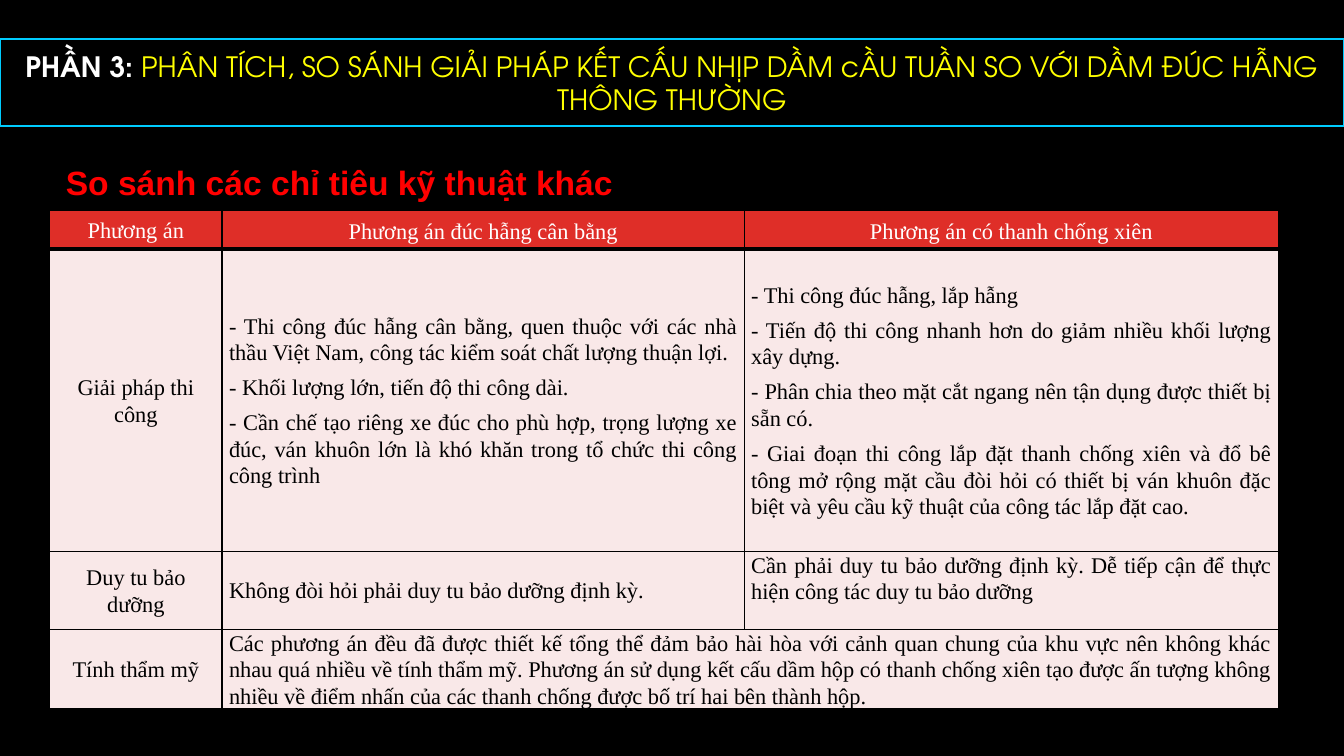
from dataclasses import dataclass

from lxml import etree
from pptx import Presentation
from pptx.dml.color import RGBColor
from pptx.enum.shapes import MSO_SHAPE
from pptx.enum.text import MSO_ANCHOR, PP_ALIGN
from pptx.oxml.ns import qn
from pptx.util import Pt

RECTANGLE = MSO_SHAPE.RECTANGLE
TOP, MIDDLE = MSO_ANCHOR.TOP, MSO_ANCHOR.MIDDLE
CENTER, JUSTIFY, LEFT = PP_ALIGN.CENTER, PP_ALIGN.JUSTIFY, PP_ALIGN.LEFT

BLACK = RGBColor(0x00, 0x00, 0x00)
WHITE = RGBColor(0xFF, 0xFF, 0xFF)
YELLOW = RGBColor(0xFF, 0xFF, 0x00)
RED = RGBColor(0xFF, 0x00, 0x00)
CYAN = RGBColor(0x00, 0xCC, 0xFF)
HEADER_RED = RGBColor(0xDF, 0x2E, 0x28)
BODY_PINK = RGBColor(0xF9, 0xE8, 0xE8)

TITLE_FONT, HEADING_FONT, TABLE_FONT = "TeX Gyre Adventor", "Arial", "Times New Roman"
COLUMN_WIDTHS = (123.12, 372.96, 381.6)
ROW_HEIGHTS = (28.08, 216, 55.44, 55.44)


@dataclass(frozen=True)
class RunStyle:
    font: str
    size: float
    color: RGBColor
    bold: bool = False


@dataclass(frozen=True)
class CellText:
    paragraphs: tuple[str, ...]
    anchor: MSO_ANCHOR = MIDDLE


HEADER_STYLE = RunStyle(TABLE_FONT, 16, WHITE)
BODY_STYLE = RunStyle(TABLE_FONT, 16, BLACK)

TABLE_ROWS = (
    (
        CellText(("Phương án",)),
        CellText(("Phương án đúc hẫng cân bằng",)),
        CellText(("Phương án có thanh chống xiên",)),
    ),
    (
        CellText(("Giải pháp thi công",)),
        CellText((
            "- Thi công đúc hẫng cân bằng, quen thuộc với các nhà thầu Việt Nam, "
            "công tác kiểm soát chất lượng thuận lợi.",
            "- Khối lượng lớn, tiến độ thi công dài.",
            "- Cần chế tạo riêng xe đúc cho phù hợp, trọng lượng xe đúc, ván khuôn lớn "
            "là khó khăn trong tổ chức thi công công trình",
        )),
        CellText((
            "- Thi công đúc hẫng, lắp hẫng",
            "- Tiến độ thi công nhanh hơn do giảm nhiều khối lượng xây dựng.",
            "- Phân chia theo mặt cắt ngang nên tận dụng được thiết bị sẵn có.",
            "- Giai đoạn thi công lắp đặt thanh chống xiên và đổ bê tông mở rộng mặt cầu "
            "đòi hỏi có thiết bị ván khuôn đặc biệt và yêu cầu kỹ thuật của công tác "
            "lắp đặt cao.",
        )),
    ),
    (
        CellText(("Duy tu bảo dưỡng",)),
        CellText(("Không đòi hỏi phải duy tu bảo dưỡng định kỳ.",)),
        CellText((
            "Cần phải duy tu bảo dưỡng định kỳ. Dễ tiếp cận để thực hiện công tác "
            "duy tu bảo dưỡng",
        ), TOP),
    ),
    (
        CellText(("Tính thẩm mỹ",)),
        CellText((
            "Các phương án đều đã được thiết kế tổng thể đảm bảo hài hòa với cảnh quan "
            "chung của khu vực nên không khác nhau quá nhiều về tính thẩm mỹ. Phương án "
            "sử dụng kết cấu dầm hộp có thanh chống xiên tạo được ấn tượng không nhiều "
            "về điểm nhấn của các thanh chống được bố trí hai bên thành hộp.",
        )),
    ),
)


def add_run(paragraph, text: str, style: RunStyle) -> None:
    run = paragraph.add_run()
    run.text = text
    run.font.name = style.font
    run.font.size = Pt(style.size)
    run.font.bold = style.bold
    run.font.color.rgb = style.color


def set_borders(cell, top: float, bottom: float) -> None:
    properties = cell._tc.get_or_add_tcPr()
    widths = {"a:lnL": 1, "a:lnR": 1, "a:lnT": top, "a:lnB": bottom}
    for position, (tag, width) in enumerate(widths.items()):
        line = etree.Element(qn(tag), w=str(int(Pt(width))))
        fill = etree.SubElement(line, qn("a:solidFill"))
        etree.SubElement(fill, qn("a:srgbClr"), val=str(BLACK))
        properties.insert(position, line)


def fill_cell(cell, content: CellText, is_header: bool, is_label: bool) -> None:
    cell.vertical_anchor = content.anchor
    cell.margin_left = cell.margin_right = Pt(5)
    cell.margin_top = cell.margin_bottom = Pt(0)
    frame = cell.text_frame
    for index, text in enumerate(content.paragraphs):
        paragraph = frame.add_paragraph() if index else frame.paragraphs[0]
        paragraph.alignment = CENTER if is_header or is_label else JUSTIFY
        paragraph.line_spacing = 1.2 if is_header and not is_label else 1.07
        paragraph.space_before = Pt(3 if index else 0)
        paragraph.space_after = Pt(0 if is_header and not is_label else 3)
        add_run(paragraph, text, HEADER_STYLE if is_header else BODY_STYLE)


def add_comparison_table(slide) -> None:
    table = slide.shapes.add_table(
        len(ROW_HEIGHTS), len(COLUMN_WIDTHS), Pt(35.5), Pt(150),
        Pt(sum(COLUMN_WIDTHS)), Pt(sum(ROW_HEIGHTS)),
    ).table
    table.first_row = table.horz_banding = False
    for column, width in zip(table.columns, COLUMN_WIDTHS):
        column.width = Pt(width)
    for row_index, (row, height) in enumerate(zip(table.rows, ROW_HEIGHTS)):
        row.height = Pt(height)
        for cell in row.cells:
            cell.fill.solid()
            cell.fill.fore_color.rgb = BODY_PINK if row_index else HEADER_RED
            set_borders(cell, 3 if row_index == 1 else 1, 1 if row_index else 3)
    # The last row has one shared remark for both options
    table.cell(3, 1).merge(table.cell(3, 2))
    for row_index, contents in enumerate(TABLE_ROWS):
        for column_index, content in enumerate(contents):
            cell = table.cell(row_index, column_index)
            fill_cell(cell, content, row_index == 0, column_index == 0)


def add_heading(slide) -> None:
    shape = slide.shapes.add_textbox(Pt(13), Pt(112.3), Pt(805), Pt(36))
    frame = shape.text_frame
    frame.word_wrap = True
    frame.margin_left = Pt(34)
    paragraph = frame.paragraphs[0]
    paragraph.alignment = LEFT
    add_run(paragraph, "So sánh các chỉ tiêu kỹ thuật khác",
            RunStyle(HEADING_FONT, 24, RED, True))


def add_title_bar(slide) -> None:
    shape = slide.shapes.add_shape(RECTANGLE, Pt(0), Pt(28), Pt(960), Pt(62))
    shape.shadow.inherit = False
    shape.fill.solid()
    shape.fill.fore_color.rgb = BLACK
    shape.line.color.rgb = CYAN
    shape.line.width = Pt(1.75)
    frame = shape.text_frame
    frame.word_wrap = True
    frame.vertical_anchor = TOP
    frame.margin_left = frame.margin_right = frame.margin_top = Pt(7.2)
    frame.margin_bottom = Pt(3.6)
    paragraph = frame.paragraphs[0]
    paragraph.alignment = CENTER
    add_run(paragraph, "PHẦN 3: ", RunStyle(TITLE_FONT, 20, WHITE, True))
    add_run(
        paragraph,
        "PHÂN TÍCH, SO SÁNH GIẢI PHÁP KẾT CẤU NHỊP DẦM cẦU TUẦN "
        "SO VỚI DẦM ĐÚC HẪNG THÔNG THƯỜNG",
        RunStyle(TITLE_FONT, 20, YELLOW),
    )


def main() -> None:
    presentation = Presentation()
    presentation.slide_width, presentation.slide_height = Pt(960), Pt(540)
    slide = presentation.slides.add_slide(presentation.slide_layouts[6])
    slide.background.fill.solid()
    slide.background.fill.fore_color.rgb = BLACK
    add_comparison_table(slide)
    add_heading(slide)
    add_title_bar(slide)
    presentation.save("out.pptx")


if __name__ == "__main__":
    main()
